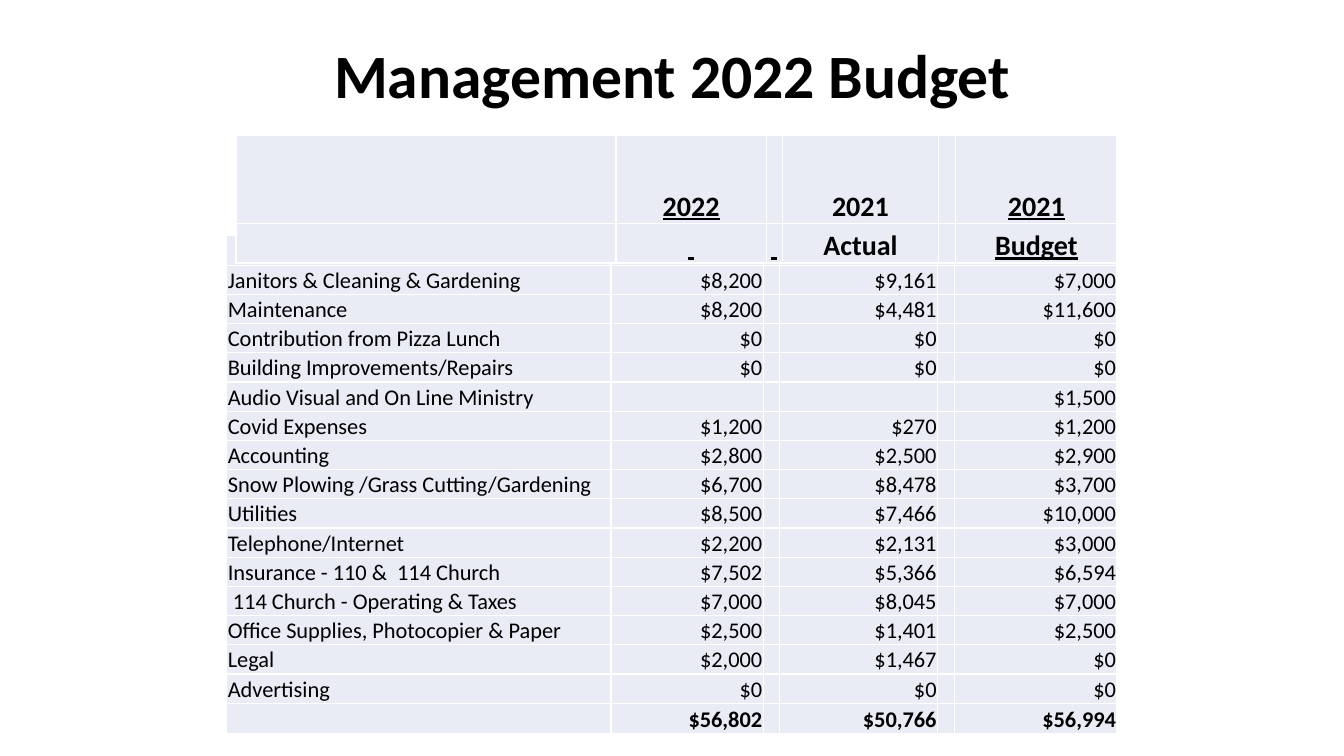
from dataclasses import dataclass

from pptx import Presentation
from pptx.dml.color import RGBColor as RGB
from pptx.enum.text import MSO_ANCHOR as Anchor, PP_ALIGN as Align
from pptx.util import Inches, Pt


@dataclass(frozen=True)
class Theme:
    """Colours, font and type sizes of the slide."""
    font: str = "Calibri"
    ink: RGB = RGB(0x00, 0x00, 0x00)
    cell: RGB = RGB(0xE9, 0xEB, 0xF5)
    title: int = 44
    header: int = 20
    body: int = 16


class BudgetSlide:
    """Draws titles and tables on one slide in one theme."""

    def __init__(self, prs, theme):
        """Add a blank slide to the presentation."""
        self.s = prs.slides.add_slide(prs.slide_layouts[6])
        self.theme = theme

    def style(self, p, size, align, bold=False, underline=False):
        """Set the font and alignment of a paragraph."""
        p.alignment = align
        f = p.font
        f.name, f.size, f.bold, f.underline = self.theme.font, Pt(size), bold, underline
        f.color.rgb = self.theme.ink
        if not p.runs:
            p._p.get_or_add_endParaRPr().set("sz", str(size * 100))

    def title(self, text, x, y, w, h):
        """Add the centred heading."""
        tf = self.s.shapes.add_textbox(*map(Inches, (x, y, w, h))).text_frame
        tf.word_wrap = True
        tf.vertical_anchor = Anchor.TOP
        p = tf.paragraphs[0]
        p.text = text
        p.line_spacing = 0.9
        self.style(p, self.theme.title, Align.CENTER, bold=True)

    def table(self, x, y, widths, heights, rows, cell_style):
        """Add a table; cell_style gives the text style for a row and column."""
        box = map(Inches, (x, y, sum(widths), sum(heights)))
        tbl = self.s.shapes.add_table(len(rows), len(widths), *box).table
        tbl.first_row = tbl.horz_banding = False
        for col, w in zip(tbl.columns, widths):
            col.width = Inches(w)
        for i, (row, h) in enumerate(zip(rows, heights)):
            tbl.rows[i].height = Inches(h)
            for j, text in enumerate(row):
                self.cell(tbl.cell(i, j), text, cell_style(i, j))

    def cell(self, c, text, style):
        """Fill one table cell."""
        c.fill.solid()
        c.fill.fore_color.rgb = self.theme.cell
        c.margin_left = c.margin_right = c.margin_top = Inches(0.01)
        c.margin_bottom = 0
        c.vertical_anchor = Anchor.BOTTOM
        p = c.text_frame.paragraphs[0]
        if text:
            p.text = text
        self.style(p, **style)


HEADER = [
    ("", "2022", "", "2021", "", "2021"),
    ("", " ", " ", "Actual", "", "Budget"),
]
BUDGET = [
    ("", "", "", ""),
    ("Janitors & Cleaning & Gardening", "$8,200", "$9,161", "$7,000"),
    ("Maintenance", "$8,200", "$4,481", "$11,600"),
    ("Contribution from Pizza Lunch", "$0", "$0", "$0"),
    ("Building Improvements/Repairs", "$0", "$0", "$0"),
    ("Audio Visual and On Line Ministry", "", "", "$1,500"),
    ("Covid Expenses", "$1,200", "$270", "$1,200"),
    ("Accounting", "$2,800", "$2,500", "$2,900"),
    ("Snow Plowing /Grass Cutting/Gardening", "$6,700", "$8,478", "$3,700"),
    ("Utilities", "$8,500", "$7,466", "$10,000"),
    ("Telephone/Internet", "$2,200", "$2,131", "$3,000"),
    ("Insurance - 110 &  114 Church", "$7,502", "$5,366", "$6,594"),
    (" 114 Church - Operating & Taxes", "$7,000", "$8,045", "$7,000"),
    ("Office Supplies, Photocopier & Paper", "$2,500", "$1,401", "$2,500"),
    ("Legal", "$2,000", "$1,467", "$0"),
    ("Advertising", "$0", "$0", "$0"),
    ("", "$56,802", "$50,766", "$56,994"),
]


def main():
    """Build and save the budget slide."""
    prs = Presentation()
    prs.slide_width, prs.slide_height = Inches(13.33), Inches(7.5)
    theme = Theme()
    slide = BudgetSlide(prs, theme)
    slide.title("Management 2022 Budget", 0.92, 0.4, 11.5, 1.45)

    total = len(BUDGET) - 1
    slide.table(
        2.25, 2.34, (3.81, 1.51, 0.16, 1.57, 0.17, 1.61), [0.29] * total + [0.3],
        [(item, plan, "", actual, "", budget) for item, plan, actual, budget in BUDGET],
        lambda i, j: dict(size=theme.body, bold=i == total,
                          align=Align.RIGHT if j else Align.LEFT))
    slide.table(
        2.34, 1.34, (3.77, 1.49, 0.16, 1.55, 0.17, 1.6), (0.88, 0.39), HEADER,
        lambda i, j: dict(size=theme.header, bold=True, underline=j != 3,
                          align=Align.CENTER))
    prs.save("out.pptx")


if __name__ == "__main__":
    main()
